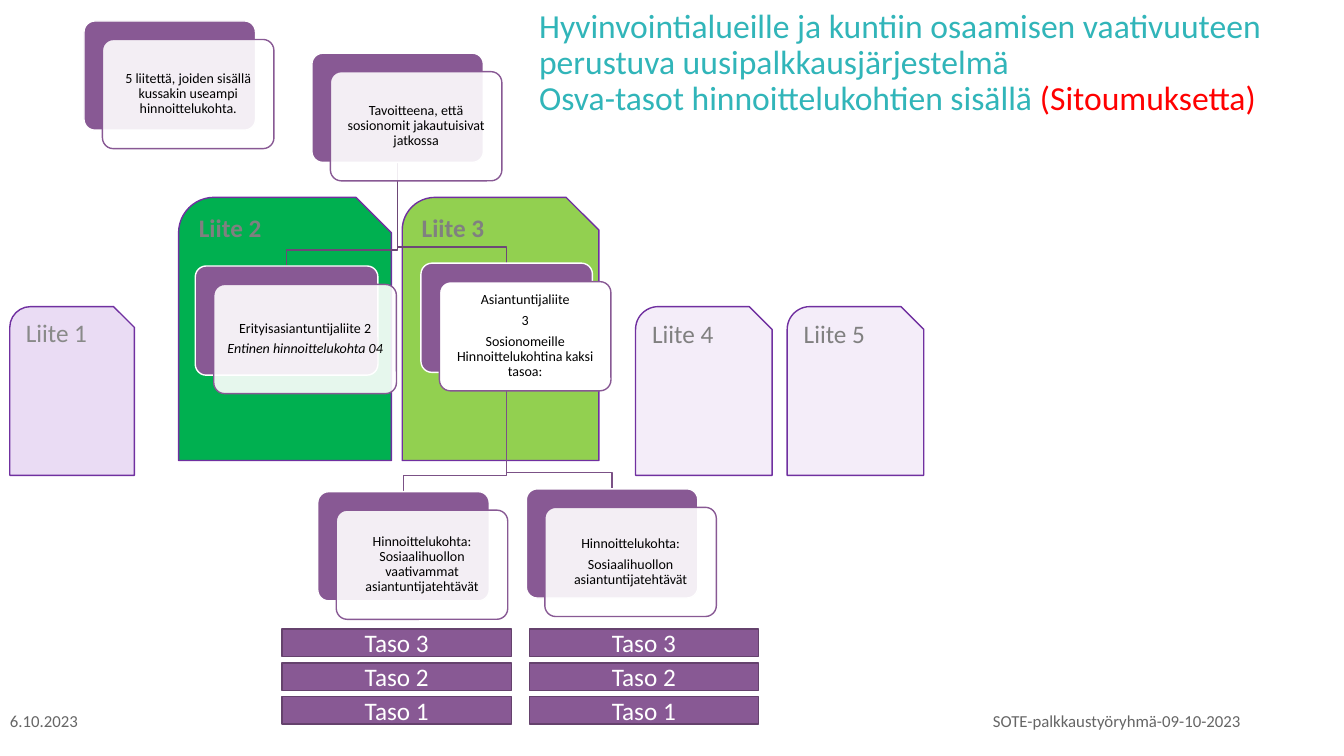
from lxml import etree
from pptx import Presentation
from pptx.dml.color import RGBColor
from pptx.enum.shapes import MSO_SHAPE
from pptx.enum.text import MSO_ANCHOR, PP_ALIGN
from pptx.oxml.ns import qn
from pptx.util import Pt

RECTANGLE = MSO_SHAPE.RECTANGLE
ROUNDED = MSO_SHAPE.ROUNDED_RECTANGLE
FOLDER = MSO_SHAPE.SNIP_ROUND_RECTANGLE
TOP, MIDDLE, BOTTOM = MSO_ANCHOR.TOP, MSO_ANCHOR.MIDDLE, MSO_ANCHOR.BOTTOM
LEFT, CENTER = PP_ALIGN.LEFT, PP_ALIGN.CENTER

FONT = "Calibri"
COLORS = {
    "white": "FFFFFF", "black": "000000", "purple": "885994",
    "bar_line": "65426D", "upper_line": "6D4777", "lower_line": "7B5186",
    "folder_line": "7030A0", "lilac": "EADCF4", "pale": "F4EDF9",
    "green": "00B050", "lime": "92D050", "grey": "808080",
    "warm_grey": "898A89", "footer": "666666", "teal": "31B5B9", "red": "FF0000",
}

# Content: a paragraph is a string or a list of (text, format) spans
TITLE = [
    "Hyvinvointialueille ja kuntiin osaamisen vaativuuteen perustuva uusipalkkausjärjestelmä",
    [("Osva-tasot hinnoittelukohtien sisällä ", {}), ("(Sitoumuksetta)", {"color": "red"})],
]
FOOTERS = [
    ("SOTE-palkkaustyöryhmä-09-10-2023", 635.8, 324, CENTER),
    ("6.10.2023", 0, 216, LEFT),
]
# Label, left, top, width, height, fill, text colour, bold
FOLDERS = [
    ("Liite 2", 127.6, 141, 152, 188, "green", "grey", True),
    ("Liite 5", 562.3, 219, 97.5, 120.5, "pale", "grey", False),
    ("Liite 4", 454, 219, 97.5, 120.5, "pale", "grey", False),
    ("Liite 3", 287.3, 141, 140.5, 188, "lime", "grey", True),
    ("Liite 1", 7, 219, 89, 120.5, "lilac", "warm_grey", False),
]
# Left, top, width, front transparency percentage, paragraphs
CARDS = {
    "appendices": (60, 15, 122.5, 10, ["5 liitettä, joiden sisällä kussakin useampi hinnoittelukohta."]),
    "goal": (222.8, 38, 122.5, 10, ["Tavoitteena, että sosionomit jakautuisivat jatkossa"]),
    "special": (139.5, 190, 130.5, 10, [
        "Erityisasiantuntijaliite 2",
        [("Entinen hinnoittelukohta 04", {"italic": True})]]),
    "expert": (300.7, 188, 122.5, 0, [
        "Asiantuntijaliite", "3", "Sosionomeille Hinnoittelukohtina kaksi tasoa:"]),
    "demanding": (227, 351.2, 122.5, 10, [
        "Hinnoittelukohta: Sosiaalihuollon vaativammat asiantuntijatehtävät"]),
    "standard": (376, 349.2, 122.5, 10, [
        "Hinnoittelukohta:", "Sosiaalihuollon asiantuntijatehtävät"]),
}
LINKS = [
    ("expert", "standard", "lower_line"), ("expert", "demanding", "lower_line"),
    ("goal", "expert", "upper_line"), ("goal", "special", "upper_line"),
]
LEVELS = ["Taso 3", "Taso 2", "Taso 1"]
LEVEL_LEFTS = [201.5, 378]

CARD_HEIGHT, CARD_SHIFT, BEND_GAP = 78, 13.2, 11.5
LEVEL_TOP, LEVEL_STEP, LEVEL_WIDTH, LEVEL_HEIGHT = 449.3, 24.2, 163.8, 19.6

deck = Presentation()
deck.slide_width, deck.slide_height = Pt(960), Pt(540)
page = deck.slides.add_slide(deck.slide_layouts[6])


def rgb(name):
    return RGBColor.from_string(COLORS[name])


def write(box, paragraphs, size=18, color="black", bold=False, align=LEFT, anchor=TOP,
          spacing=1.0, after=0, margins=(7.2, 3.6)):
    frame = box.text_frame
    frame.word_wrap = True
    frame.vertical_anchor = anchor
    frame.margin_left = frame.margin_right = Pt(margins[0])
    frame.margin_top = frame.margin_bottom = Pt(margins[1])
    for index, content in enumerate(paragraphs):
        para = frame.add_paragraph() if index else frame.paragraphs[0]
        para.alignment, para.line_spacing, para.space_after = align, spacing, Pt(after)
        spans = [(content, {})] if isinstance(content, str) else content
        for text, style in spans:
            span = para.add_run()
            span.text = text
            span.font.name, span.font.size, span.font.bold = FONT, Pt(size), bold
            span.font.italic = style.get("italic", False)
            span.font.color.rgb = rgb(style.get("color", color))


def add_text(left, top, width, height, paragraphs, **style):
    box = page.shapes.add_textbox(Pt(left), Pt(top), Pt(width), Pt(height))
    write(box, paragraphs, **style)


def add_box(kind, left, top, width, height, fill, line, transparency=0):
    box = page.shapes.add_shape(kind, Pt(left), Pt(top), Pt(width), Pt(height))
    box.shadow.inherit = False
    box.fill.solid()
    box.fill.fore_color.rgb = rgb(fill)
    box.line.color.rgb = rgb(line)
    box.line.width = Pt(1)
    if transparency:
        color = box.fill._xPr.find(".//" + qn("a:srgbClr"))
        etree.SubElement(color, qn("a:alpha"), val=str((100 - transparency) * 1000))
    return box


def add_link(parent, child, color):
    left, top, width = CARDS[parent][:3]
    child_left, child_top, child_width = CARDS[child][:3]
    start_x, start_y = left + width / 2, top + CARD_HEIGHT
    end_x, bend_y = child_left + child_width / 2, child_top - BEND_GAP
    builder = page.shapes.build_freeform(Pt(start_x), Pt(start_y))
    corners = [(start_x, bend_y), (end_x, bend_y), (end_x, child_top)]
    builder.add_line_segments([(Pt(x), Pt(y)) for x, y in corners], close=False)
    link = builder.convert_to_shape()
    link.shadow.inherit = False
    link.fill.background()
    link.line.color.rgb = rgb(color)
    link.line.width = Pt(1)


# Appendix folders
for label, left, top, width, height, fill, color, bold in FOLDERS:
    folder = add_box(FOLDER, left, top, width, height, fill, "folder_line")
    write(folder, [label], color=color, bold=bold)

# Title and footers
add_text(378, 4, 544.5, 84, TITLE, size=24, color="teal", anchor=BOTTOM, spacing=0.9)
for text, left, width, align in FOOTERS:
    add_text(left, 500.5, width, 28.8, [text], size=12, color="footer", align=align, anchor=MIDDLE)

# Level bars
for left in LEVEL_LEFTS:
    for row, level in enumerate(LEVELS):
        bar = add_box(RECTANGLE, left, LEVEL_TOP + row * LEVEL_STEP, LEVEL_WIDTH, LEVEL_HEIGHT,
                      "purple", "bar_line")
        write(bar, [level], color="white", align=CENTER, anchor=MIDDLE)

# Hierarchy links, then the cards above them
for parent, child, color in LINKS:
    add_link(parent, child, color)
for left, top, width, transparency, paragraphs in CARDS.values():
    back = add_box(ROUNDED, left, top, width, CARD_HEIGHT, "purple", "white")
    front = add_box(ROUNDED, left + CARD_SHIFT, top + CARD_SHIFT, width, CARD_HEIGHT,
                    "white", "purple", transparency)
    for card in (back, front):
        card.adjustments[0] = 0.1
    write(front, paragraphs, size=10, align=CENTER, anchor=MIDDLE, spacing=0.9, after=4,
          margins=(3, 3))

deck.save("out.pptx")
